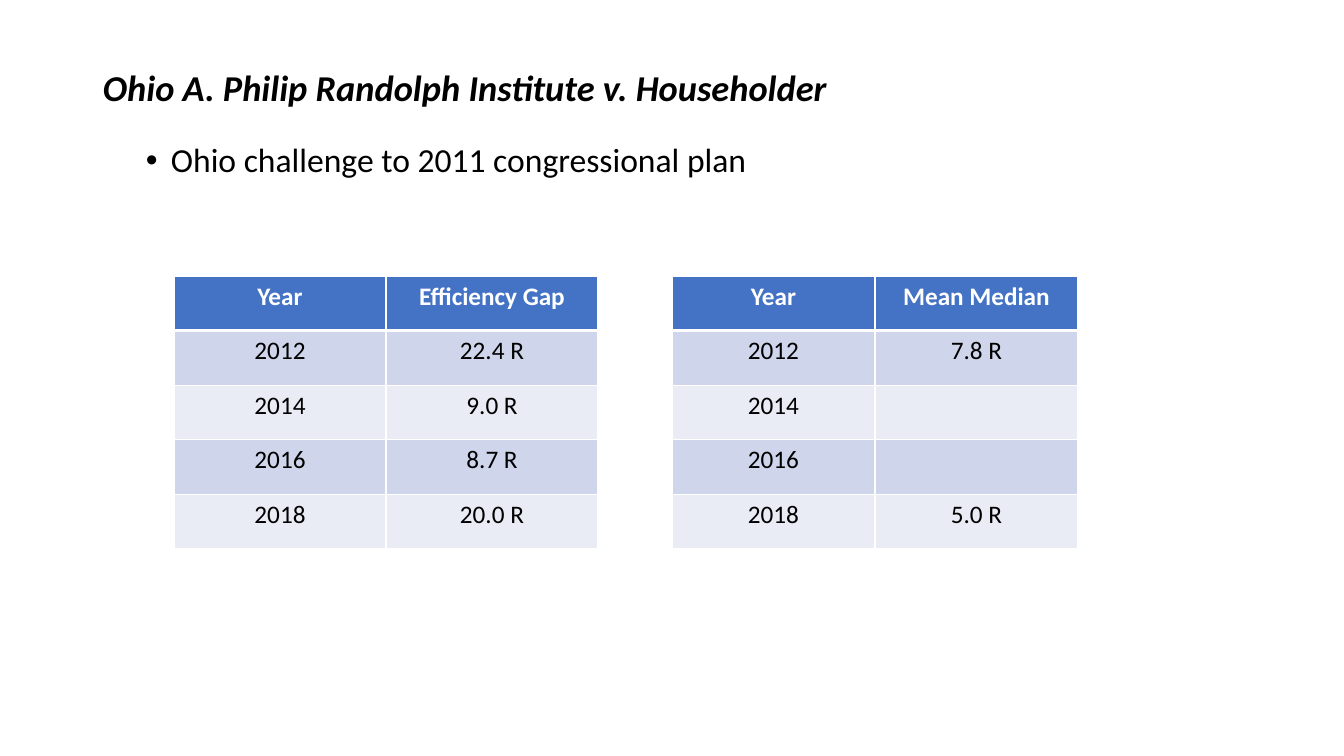
from dataclasses import dataclass

from lxml.etree import SubElement
from pptx import Presentation
from pptx.dml.color import RGBColor
from pptx.enum.text import MSO_ANCHOR, PP_ALIGN
from pptx.oxml.ns import qn
from pptx.util import Emu, Pt


@dataclass(frozen=True)
class Theme:
    font: str = "Calibri"
    text: str = "000000"
    white: str = "FFFFFF"
    header: str = "4472C4"
    bands: tuple = ("CFD5EA", "E9EBF5")
    title_size: int = 26
    body_size: int = 24
    table_size: int = 18


THEME = Theme()
YEARS = ("2012", "2014", "2016", "2018")


def px(n):
    return Emu(round(n * 914400 / 100.8))


def write(tf, text, size, color=THEME.text, para=None, **font):
    p = tf.paragraphs[0]
    for name, value in (para or {}).items():
        setattr(p, name, value)
    r = p.add_run()
    r.text = text
    r.font.color.rgb = RGBColor.from_string(color)
    for name, value in {"name": THEME.font, "size": Pt(size), **font}.items():
        setattr(r.font, name, value)
    return p


def add_text(s, box, text, size, anchor, para, **font):
    tf = s.shapes.add_textbox(*map(px, box)).text_frame
    tf.word_wrap = True
    tf.vertical_anchor = anchor
    return write(tf, text, size, para=para, **font)


def add_bullet(p, indent):
    pPr = p._p.get_or_add_pPr()
    pPr.set("marL", str(px(indent)))
    pPr.set("indent", str(-px(indent)))
    SubElement(pPr, qn("a:buFont"), typeface="Arial")
    SubElement(pPr, qn("a:buChar"), char="•")


def set_borders(cell, **widths):
    tcPr = cell._tc.get_or_add_tcPr()
    for side in "LRTB":
        ln = SubElement(tcPr, qn(f"a:ln{side}"), w=str(Pt(widths.get(side, 1))))
        fill = SubElement(ln, qn("a:solidFill"))
        SubElement(fill, qn("a:srgbClr"), val=THEME.white)


def add_year_table(s, left, col_width, measure, values):
    top, height = 276, 273
    rows = [("Year", measure), *zip(YEARS, values)]
    table = s.shapes.add_table(len(rows), 2, px(left), px(top),
                               px(2 * col_width), px(height)).table
    for col in table.columns:
        col.width = px(col_width)
    for i, row in enumerate(rows):
        is_header = i == 0
        fill = THEME.header if is_header else THEME.bands[(i - 1) % 2]
        color = THEME.white if is_header else THEME.text
        # Thick rule between the header and the first year
        widths = {0: {"B": 3}, 1: {"T": 3}}.get(i, {})
        for j, text in enumerate(row):
            cell = table.cell(i, j)
            set_borders(cell, **widths)
            cell.fill.solid()
            cell.fill.fore_color.rgb = RGBColor.from_string(fill)
            if text:
                write(cell.text_frame, text, THEME.table_size, color,
                      {"alignment": PP_ALIGN.CENTER}, bold=is_header)


def main():
    prs = Presentation()
    prs.slide_width, prs.slide_height = px(1344), px(756)
    s = prs.slides.add_slide(prs.slide_layouts[6])

    # Case name and summary
    add_text(s, (93, 40, 1159, 99), "Ohio A. Philip Randolph Institute v. Householder",
             THEME.title_size, MSO_ANCHOR.MIDDLE, {"line_spacing": 0.9},
             bold=True, italic=True)
    p = add_text(s, (136, 139, 1159, 60), "Ohio challenge to 2011 congressional plan",
                 THEME.body_size, MSO_ANCHOR.TOP,
                 {"line_spacing": 0.9, "space_before": Pt(10)})
    add_bullet(p, 25)

    # Partisan bias measures by year
    add_year_table(s, 174, 212, "Efficiency Gap", ("22.4 R", "9.0 R", "8.7 R", "20.0 R"))
    add_year_table(s, 672, 203, "Mean Median", ("7.8 R", "", "", "5.0 R"))

    prs.save("out.pptx")


if __name__ == "__main__":
    main()
